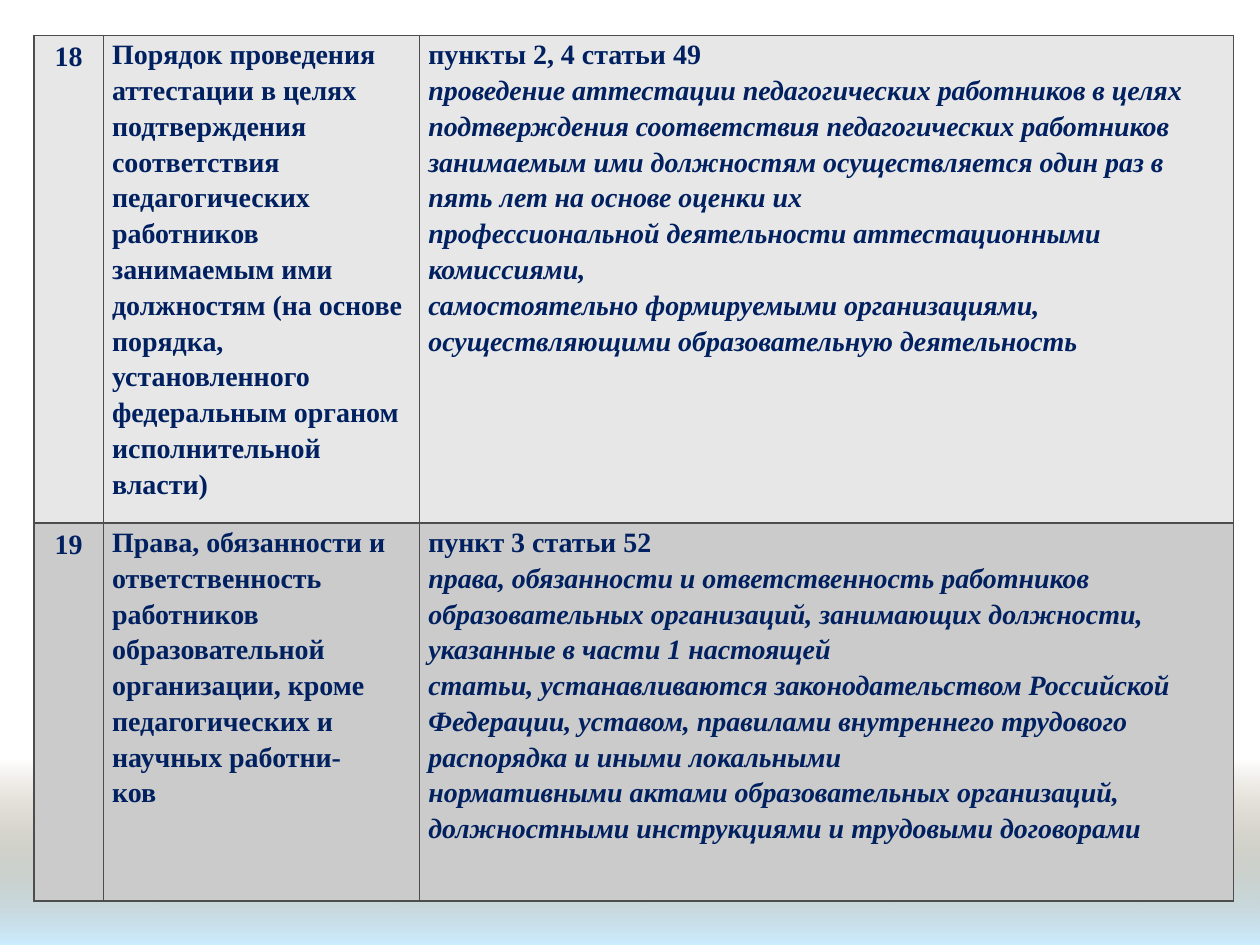
from lxml import etree
from pptx import Presentation
from pptx.dml.color import RGBColor
from pptx.enum import shapes, text
from pptx.oxml import ns
from pptx.util import Inches, Pt

ROWS = [
    ("E7E7E7", "18",
     ["Порядок проведения аттестации в целях подтверждения соответствия "
      "педагогических работников занимаемым ими должностям (на основе порядка,",
      "установленного федеральным органом исполнительной власти)"],
     ["пункты 2, 4 статьи 49",
      "проведение аттестации педагогических работников в целях подтверждения "
      "соответствия педагогических работников занимаемым ими должностям "
      "осуществляется один раз в пять лет на основе оценки их",
      "профессиональной деятельности аттестационными комиссиями,",
      "самостоятельно формируемыми организациями, осуществляющими "
      "образовательную деятельность"]),
    ("CBCBCB", "19",
     ["Права, обязанности и ответственность работников",
      "образовательной организации, кроме педагогических и научных работни-",
      "ков"],
     ["пункт 3 статьи 52",
      "права, обязанности и ответственность работников образовательных "
      "организаций, занимающих должности, указанные в части 1 настоящей",
      "статьи, устанавливаются законодательством Российской Федерации, уставом, "
      "правилами внутреннего трудового распорядка и иными локальными",
      "нормативными актами образовательных организаций, должностными "
      "инструкциями и трудовыми договорами"]),
]


def color(code):
    return RGBColor.from_string(code)


class Deck:
    font, size, ink, edge = "Times New Roman", 16, "002060", "4D4D4D"

    def __init__(self, wide, high):
        self.show = Presentation()
        self.show.slide_width = Inches(wide)
        self.show.slide_height = Inches(high)
        self.slide = self.show.slides.add_slide(self.show.slide_layouts[6])

    def fade(self, box, start, end):
        """Rectangle that fades in from a clear top to a solid bottom."""
        band = self.slide.shapes.add_shape(
            shapes.MSO_SHAPE.RECTANGLE, *map(Inches, box))
        band.shadow.inherit = False
        band.line.fill.background()
        band.fill.gradient()
        band.fill.gradient_angle = 270
        for stop, code in zip(band.fill.gradient_stops, (start, end)):
            stop.color.rgb = color(code)
        clear = band.fill._xPr.find(".//" + ns.qn("a:srgbClr"))
        etree.SubElement(clear, ns.qn("a:alpha"), val="0")

    def table(self, box, cols, rows):
        grid = self.slide.shapes.add_table(
            len(rows), len(cols), *map(Inches, box)).table
        for col, wide in zip(grid.columns, cols):
            col.width = Inches(wide)
        for row, high in zip(grid.rows, rows):
            row.height = Inches(high)
        return grid

    def border(self, cell):
        props = cell._tc.get_or_add_tcPr()
        for side in ("a:lnL", "a:lnR", "a:lnT", "a:lnB"):
            line = etree.SubElement(props, ns.qn(side), w=str(Pt(1)))
            fill = etree.SubElement(line, ns.qn("a:solidFill"))
            etree.SubElement(fill, ns.qn("a:srgbClr"), val=self.edge)

    def cell(self, cell, lines, fill, center=False, slant=False):
        """Fill one cell; slant sets all lines but the first in italics."""
        self.border(cell)
        cell.fill.solid()
        cell.fill.fore_color.rgb = color(fill)
        if not center:
            cell.margin_left = cell.margin_right = Inches(0.07)
            cell.margin_top = cell.margin_bottom = 0
        cell.text_frame.text = "\n".join(lines)
        for num, para in enumerate(cell.text_frame.paragraphs):
            if center:
                para.alignment = text.PP_ALIGN.CENTER
            else:
                para.line_spacing = 1.15
            for run in para.runs:
                run.font.name = self.font
                run.font.size = Pt(self.size)
                run.font.bold = True
                run.font.italic = slant and num > 0
                run.font.color.rgb = color(self.ink)


def main():
    deck = Deck(10, 7.5)

    # Background fade
    deck.fade((0, 6.03, 10, 1.47), "765E2F", "CCECFF")

    # Table of law articles
    grid = deck.table((0.27, 0.28, 9.52, 6.87), (0.55, 2.51, 6.46), (3.87, 3))
    for row, (fill, num, topic, law) in enumerate(ROWS):
        deck.cell(grid.cell(row, 0), [num], fill, center=True)
        deck.cell(grid.cell(row, 1), topic, fill)
        deck.cell(grid.cell(row, 2), law, fill, slant=True)

    deck.show.save("out.pptx")


if __name__ == "__main__":
    main()
